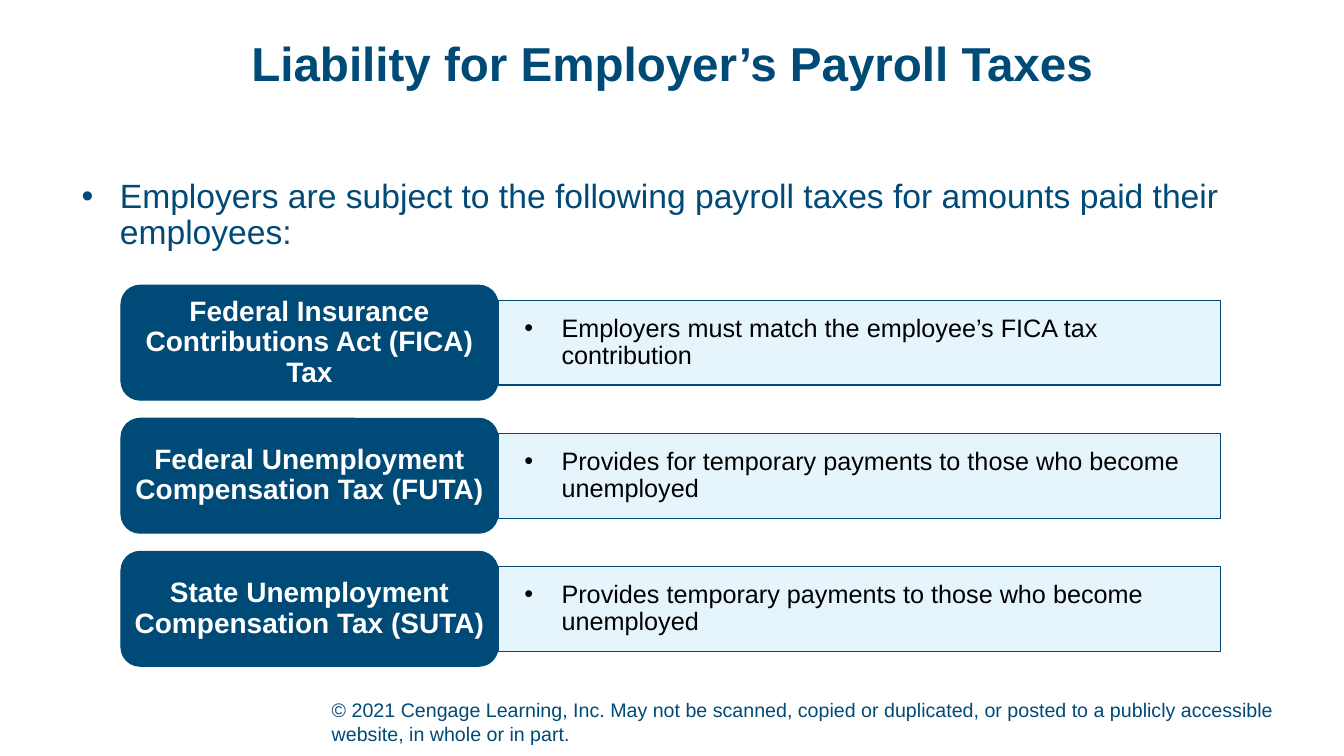
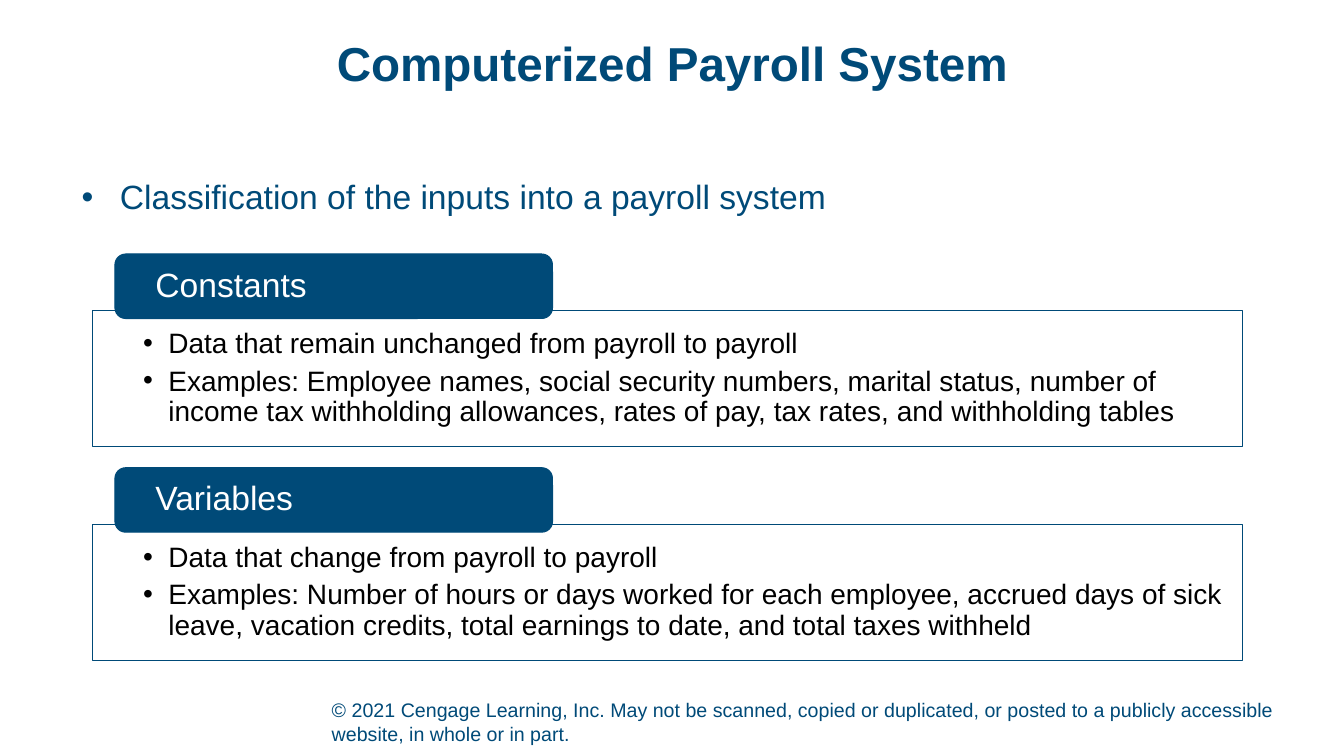
"""Build two payroll slides: employer taxes and computerized payroll inputs."""
from dataclasses import dataclass

from lxml.etree import SubElement
from pptx import Presentation
from pptx.dml.color import RGBColor
from pptx.enum.shapes import MSO_SHAPE
from pptx.enum.text import MSO_ANCHOR, PP_ALIGN
from pptx.oxml.ns import qn
from pptx.util import Inches, Pt

NOTICE = ("© 2021 Cengage Learning, Inc. May not be scanned, copied or duplicated, "
          "or posted to a publicly accessible website, in whole or in part.")

TAXES = {
    "title": "Liability for Employer’s Payroll Taxes",
    "lead": "Employers are subject to the following payroll taxes for amounts "
            "paid their employees:",
    "rows": [
        ("Federal Insurance Contributions Act (FICA) Tax",
         "Employers must match the employee’s FICA tax contribution"),
        ("Federal Unemployment Compensation Tax (FUTA)",
         "Provides for temporary payments to those who become unemployed"),
        ("State Unemployment Compensation Tax (SUTA)",
         "Provides temporary payments to those who become unemployed"),
    ],
}

INPUTS = {
    "title": "Computerized Payroll System",
    "lead": "Classification of the inputs into a payroll system",
    "groups": [
        ("Constants", [
            "Data that remain unchanged from payroll to payroll",
            "Examples: Employee names, social security numbers, marital status, "
            "number of income tax withholding allowances, rates of pay, tax rates, "
            "and withholding tables"]),
        ("Variables", [
            "Data that change from payroll to payroll",
            "Examples: Number of hours or days worked for each employee, accrued "
            "days of sick leave, vacation credits, total earnings to date, and "
            "total taxes withheld"]),
    ],
}


@dataclass(frozen=True)
class Theme:
    """Colours, font and type sizes."""
    navy: RGBColor = RGBColor.from_string("004A78")
    pale: RGBColor = RGBColor.from_string("E6F5FB")
    white: RGBColor = RGBColor.from_string("FFFFFF")
    black: RGBColor = RGBColor.from_string("000000")
    font: str = "Arial"
    title: int = 34
    lead: int = 24
    label: int = 20
    note: int = 18
    foot: int = 14
    line: float = 0.75


LOOK = Theme()


def write(shape, text, *, size, color=LOOK.navy, bold=False, align=PP_ALIGN.LEFT,
          anchor=MSO_ANCHOR.MIDDLE, left=0, hang=0, gap=0, lines=0.9, foot=0):
    """Fill a shape with one paragraph or a list; a hang adds bullets."""
    frame = shape.text_frame
    frame.word_wrap = True
    frame.vertical_anchor = anchor
    frame.margin_left = frame.margin_top = frame.margin_right = 0
    frame.margin_bottom = Inches(foot)
    items = [text] if isinstance(text, str) else text
    for i, item in enumerate(items):
        para = frame.add_paragraph() if i else frame.paragraphs[0]
        props = para._p.get_or_add_pPr()
        props.set("marL", str(Inches(left)))
        props.set("indent", str(Inches(-hang)))
        if hang:
            SubElement(props, qn("a:buFont"), typeface=LOOK.font)
            SubElement(props, qn("a:buChar"), char="•")
        para.alignment = align
        para.line_spacing = lines
        para.space_before = Pt(gap if i else 0)
        run = para.add_run()
        run.text = item
        font = run.font
        font.name, font.size, font.bold = LOOK.font, Pt(size), bold
        font.color.rgb = color


def label(slide, *box):
    """Add an empty text box."""
    return slide.shapes.add_textbox(*map(Inches, box))


def panel(slide, kind, fill, *box):
    """Add an outlined shape, filled if a colour is given."""
    shape = slide.shapes.add_shape(kind, *map(Inches, box))
    shape.shadow.inherit = False
    if fill is None:
        shape.fill.background()
    else:
        shape.fill.solid()
        shape.fill.fore_color.rgb = fill
    shape.line.color.rgb = LOOK.navy
    shape.line.width = Pt(LOOK.line)
    return shape


def start(deck, title, lead, top, height, anchor):
    """Add a slide with footer, title and lead bullet."""
    slide = deck.slides.add_slide(deck.slide_layouts[6])
    write(label(slide, 3.29, 6.92, 9.79, 0.52), NOTICE, size=LOOK.foot,
          anchor=MSO_ANCHOR.BOTTOM, lines=1.0, foot=0.05)
    write(label(slide, 0.92, 0.4, 11.5, 0.74), title, size=LOOK.title, bold=True,
          align=PP_ALIGN.CENTER, anchor=MSO_ANCHOR.TOP)
    write(label(slide, 0.81, top, 12.3, height), lead, size=LOOK.lead,
          anchor=anchor, left=0.38, hang=0.38)
    return slide


def taxes(deck):
    """Draw each tax name beside its note."""
    slide = start(deck, TAXES["title"], TAXES["lead"], 1.78, 0.84, MSO_ANCHOR.TOP)
    left, top, step, wide, tall, bar = 1.2, 2.83, 1.32, 3.74, 1.14, 0.84
    for i, (name, note) in enumerate(TAXES["rows"]):
        y = top + i * step
        tab = panel(slide, MSO_SHAPE.ROUNDED_RECTANGLE, LOOK.navy, left, y, wide, tall)
        write(tab, name, size=LOOK.label, color=LOOK.white, bold=True,
              align=PP_ALIGN.CENTER)
        strip = panel(slide, MSO_SHAPE.RECTANGLE, LOOK.pale,
                      left + wide, y + (tall - bar) / 2, 7.17, bar)
        write(strip, note, size=LOOK.note, color=LOOK.black, left=0.63, hang=0.37)


def inputs(deck):
    """Draw each input class as a tab over its frame."""
    slide = start(deck, INPUTS["title"], INPUTS["lead"], 1.65, 0.64, MSO_ANCHOR.MIDDLE)
    top, step, drop = 2.52, 2.12, 0.56
    for i, (name, facts) in enumerate(INPUTS["groups"]):
        y = top + i * step
        tab = panel(slide, MSO_SHAPE.ROUNDED_RECTANGLE, LOOK.navy, 1.14, y, 4.34, 0.64)
        write(tab, name, size=LOOK.lead, color=LOOK.white, left=0.37)
        box = panel(slide, MSO_SHAPE.RECTANGLE, None, 0.92, y + drop, 11.4, 1.35)
        write(box, facts, size=LOOK.label, color=LOOK.black,
              left=0.75, hang=0.25, gap=5)


def main():
    """Build and save the deck."""
    deck = Presentation()
    deck.slide_width, deck.slide_height = Inches(13.33), Inches(7.5)
    taxes(deck)
    inputs(deck)
    deck.save("out.pptx")


if __name__ == "__main__":
    main()
